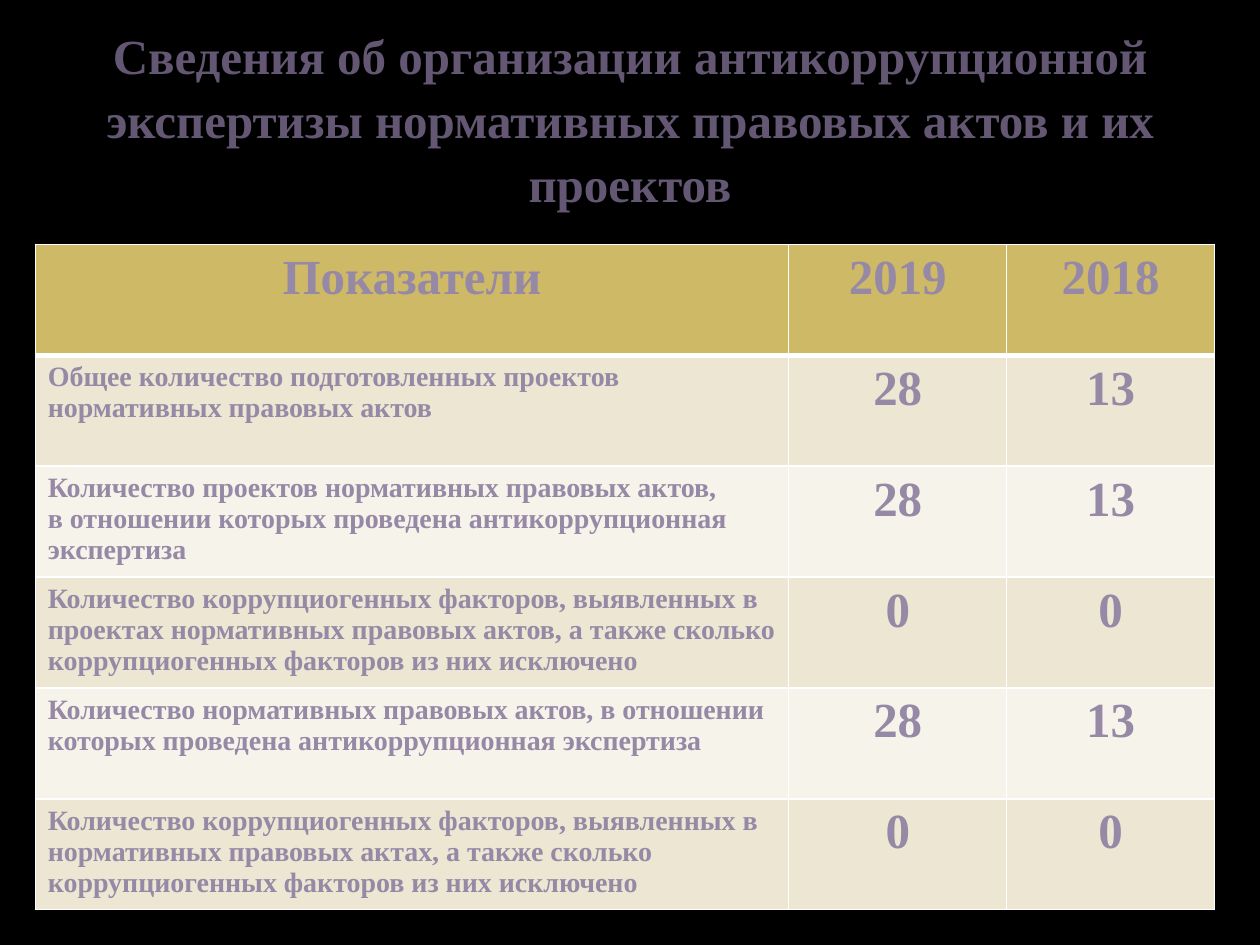
import pptx
import pptx.util
import pptx.dml.color
import pptx.enum.text
import pptx.oxml
from lxml import etree

Inches, Pt = pptx.util.Inches, pptx.util.Pt
ALIGN = pptx.enum.text.PP_ALIGN
ANCHOR = pptx.enum.text.MSO_ANCHOR

TITLE = "Сведения об организации антикоррупционной экспертизы нормативных правовых актов и их проектов"
ROWS = [
    ("Показатели", "2019", "2018"),
    ("Общее количество подготовленных проектов нормативных правовых актов", "28", "13"),
    ("Количество проектов нормативных правовых актов,\n"
     "в отношении которых проведена антикоррупционная экспертиза", "28", "13"),
    ("Количество коррупциогенных факторов, выявленных в проектах нормативных правовых актов, "
     "а также сколько коррупциогенных факторов из них исключено", "0", "0"),
    ("Количество нормативных правовых актов, в отношении которых проведена "
     "антикоррупционная экспертиза", "28", "13"),
    ("Количество коррупциогенных факторов, выявленных в нормативных правовых актах, "
     "а также сколько коррупциогенных факторов из них исключено", "0", "0"),
]
WIDTHS = [5.98, 1.73, 1.65]
HEIGHT = 0.88
HEAD, BANDS = "CEB966", ["F6F3EA", "EDE6D3"]
BIG = {"name": "Times New Roman", "size": Pt(28), "bold": True}
SMALL = {**BIG, "size": Pt(16)}


def paint(fill, color):
    fill.solid()
    fill.fore_color.rgb = pptx.dml.color.RGBColor.from_string(color)


def style(frame, font, color, align):
    for para in frame.paragraphs:
        para.alignment = align
        for run in para.runs:
            for key, value in font.items():
                setattr(run.font, key, value)
            paint(run.font.fill, color)


def edge(cell, side, width):
    """Add a white border; call before the cell is filled, as lines come first in tcPr."""
    props = cell._tc.get_or_add_tcPr()
    line = etree.SubElement(props, pptx.oxml.ns.qn("a:" + side), w=str(Pt(width)))
    fill = etree.SubElement(line, pptx.oxml.ns.qn("a:solidFill"))
    etree.SubElement(fill, pptx.oxml.ns.qn("a:srgbClr"), val="FFFFFF")


def main():
    deck = pptx.Presentation()
    deck.slide_width, deck.slide_height = Inches(10), Inches(7.5)
    slide = deck.slides.add_slide(deck.slide_layouts[5])
    paint(slide.background.fill, "000000")

    title = slide.shapes.title
    title.left, title.top = Inches(0.5), Inches(0.3)
    title.width, title.height = Inches(9), Inches(1.25)
    title.text_frame.text = TITLE
    title.text_frame.vertical_anchor = ANCHOR.MIDDLE
    title.text_frame.paragraphs[0].line_spacing = 1.09
    style(title.text_frame, BIG, "645773", ALIGN.CENTER)

    table = slide.shapes.add_table(
        len(ROWS), len(WIDTHS), Inches(0.28), Inches(1.94),
        Inches(sum(WIDTHS)), Inches(HEIGHT * len(ROWS))).table
    for col, width in zip(table.columns, WIDTHS):
        col.width = Inches(width)
    for r, row in enumerate(ROWS):
        table.rows[r].height = Inches(HEIGHT)
        for c, text in enumerate(row):
            cell = table.cell(r, c)
            cell.text = text
            label = r > 0 and c == 0
            style(cell.text_frame, SMALL if label else BIG, "9689A6",
                  ALIGN.LEFT if label else ALIGN.CENTER)
            for side in ("lnL", "lnR", "lnT", "lnB"):
                thick = (r, side) in ((0, "lnB"), (1, "lnT"))
                edge(cell, side, 3 if thick else 1)
            paint(cell.fill, BANDS[r % 2] if r else HEAD)

    deck.save("out.pptx")


if __name__ == "__main__":
    main()
